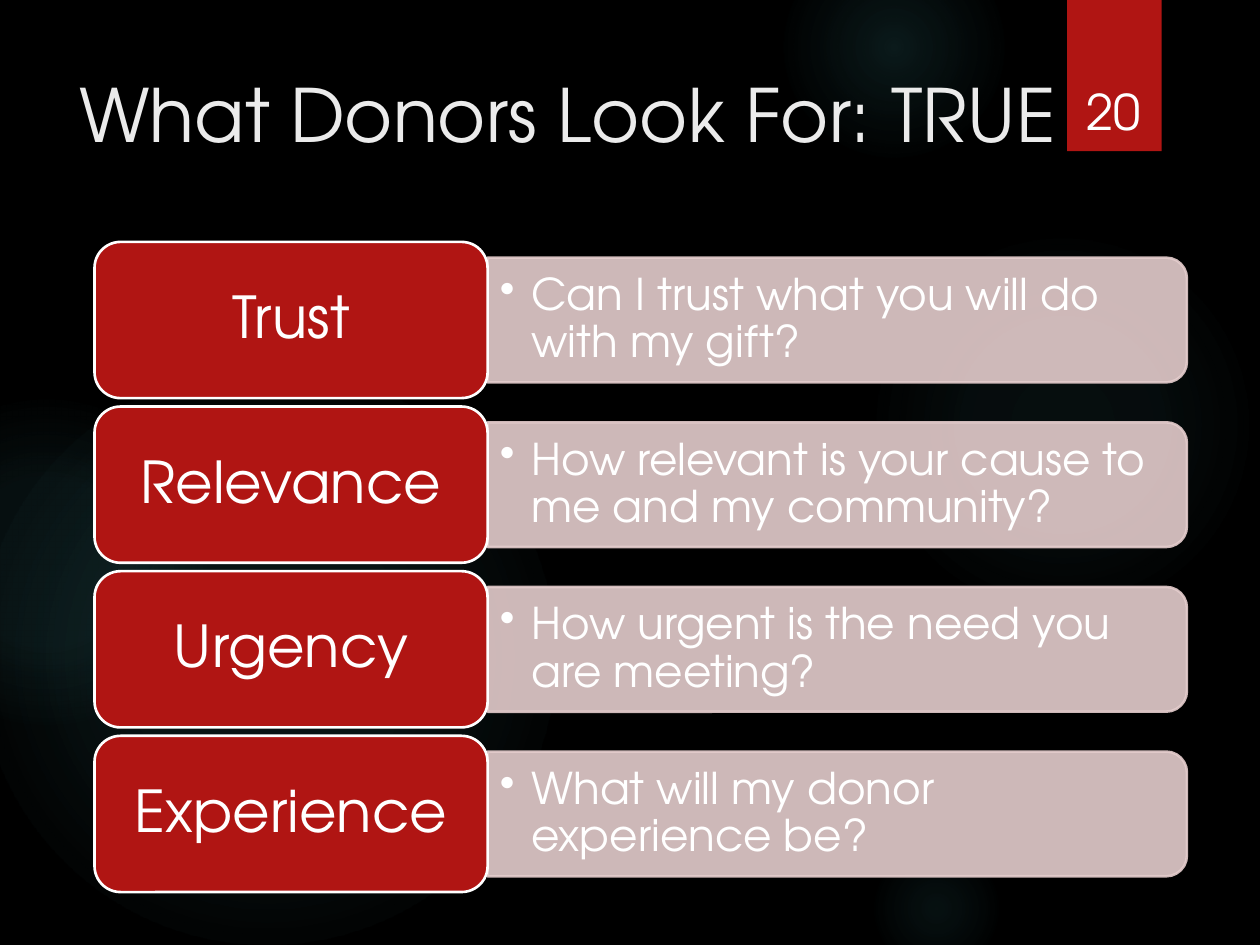
from lxml import etree
from pptx import Presentation
from pptx.dml.color import RGBColor
from pptx.enum.shapes import MSO_SHAPE
from pptx.enum.text import MSO_ANCHOR, PP_ALIGN
from pptx.oxml import parse_xml
from pptx.oxml.ns import nsdecls, qn
from pptx.util import Inches, Pt

OVAL, RECT = MSO_SHAPE.OVAL, MSO_SHAPE.RECTANGLE
ROUNDED, ROUND_SIDE = MSO_SHAPE.ROUNDED_RECTANGLE, MSO_SHAPE.ROUND_2_SAME_RECTANGLE
TOP, MIDDLE, BOTTOM = MSO_ANCHOR.TOP, MSO_ANCHOR.MIDDLE, MSO_ANCHOR.BOTTOM
LEFT, CENTER = PP_ALIGN.LEFT, PP_ALIGN.CENTER

THEME = dict(font="TeX Gyre Adventor", back="000000", glow="50B9C1", red="B01513",
             pink="E4CCCC", white="FFFFFF", title_color="EBEBEB",
             title=42, label=33, number=28, answer=25)


def rgb(name):
    return RGBColor.from_string(THEME[name])


def write(sp, text, size, color="white", align=LEFT, anchor=MIDDLE,
          inset=(0.1, 0.05), spacing=None, bullet=False):
    tf = sp.text_frame
    tf.word_wrap = True
    tf.vertical_anchor = anchor
    tf.margin_left = tf.margin_right = Inches(inset[0])
    tf.margin_top = tf.margin_bottom = Inches(inset[1])
    p = tf.paragraphs[0]
    p.alignment = align
    p.line_spacing = spacing
    if bullet:
        pPr = p._p.get_or_add_pPr()
        pPr.set("marL", str(Inches(0.25)))
        pPr.set("indent", str(-Inches(0.25)))
        etree.SubElement(pPr, qn("a:buChar")).set("char", "•")
    r = p.add_run()
    r.text = text
    r.font.name = THEME["font"]
    r.font.size = Pt(THEME[size])
    r.font.color.rgb = rgb(color)


prs = Presentation()
prs.slide_width, prs.slide_height = Inches(10), Inches(7.5)
s = prs.slides.add_slide(prs.slide_layouts[5])
s.background.fill.solid()
s.background.fill.fore_color.rgb = rgb("back")

glows = [
    (6.89, 1.83, 3.08, ((0, 7), (36, 6), (69, 0))),
    (6.22, -0.5, 1.75, ((0, 14), (36, 7), (73, 0))),
    (6.89, 6.67, 1.08, ((0, 9), (36, 5), (66, 0))),
    (-0.17, 2.92, 4.58, ((0, 11), (36, 10), (75, 0))),
    (-0.92, 3.17, 2.58, ((0, 8), (36, 8), (72, 0))),
]
for x, y, size, stops in glows:
    sp = s.shapes.add_shape(OVAL, Inches(x), Inches(y), Inches(size), Inches(size))
    sp.shadow.inherit = False
    sp.line.fill.background()
    gs = "".join(
        f'<a:gs pos="{pos * 1000}"><a:srgbClr val="{THEME["glow"]}">'
        f'<a:alpha val="{alpha * 1000}"/></a:srgbClr></a:gs>' for pos, alpha in stops)
    sp._element.spPr.find(qn("a:prstGeom")).addnext(parse_xml(
        f'<a:gradFill {nsdecls("a")}><a:gsLst>{gs}</a:gsLst><a:path path="circle">'
        '<a:fillToRect l="50000" t="50000" r="50000" b="50000"/></a:path></a:gradFill>'))

tab = s.shapes.add_shape(RECT, Inches(8.47), 0, Inches(0.75), Inches(1.2))
tab.shadow.inherit = False
tab.fill.solid()
tab.fill.fore_color.rgb = rgb("red")
tab.line.fill.background()

title = s.shapes.title
title.left, title.top, title.width, title.height = map(Inches, (0.53, 0.5, 8.05, 1.53))
write(title, "What Donors Look For: TRUE", "title", color="title_color", anchor=TOP)
s.shapes._spTree.append(title._element)

rows = [
    ("Trust", "Can I trust what you will do with my gift?"),
    ("Relevance", "How relevant is your cause to me and my community?"),
    ("Urgency", "How urgent is the need you are meeting?"),
    ("Experience", "What will my donor experience be?"),
]
LABEL_X, LABEL_W, LABEL_H = 0.75, 3.12, 1.24
BAR_X, BAR_W, BAR_H = LABEL_X + LABEL_W, 5.55, 0.99
FIRST_Y, LAST_Y = 1.92, 5.84
STEP = (LAST_Y - FIRST_Y) / (len(rows) - 1)

for i, (label, answer) in enumerate(rows):
    y = FIRST_Y + i * STEP
    mid = y + LABEL_H / 2

    bar = s.shapes.add_shape(ROUND_SIDE, Inches(BAR_X + (BAR_W - BAR_H) / 2),
                             Inches(mid - BAR_W / 2), Inches(BAR_H), Inches(BAR_W))
    bar.rotation = 90
    box = s.shapes.add_shape(ROUNDED, Inches(LABEL_X), Inches(y),
                             Inches(LABEL_W), Inches(LABEL_H))
    for sp, fill, line in ((bar, "pink", "pink"), (box, "red", "white")):
        sp.shadow.inherit = False
        sp.fill.solid()
        sp.fill.fore_color.rgb = rgb(fill)
        sp.line.color.rgb = rgb(line)
        sp.line.width = Pt(1.5)
    for clr in bar._element.spPr.iter(qn("a:srgbClr")):
        etree.SubElement(clr, qn("a:alpha")).set("val", "90000")
    write(box, label, "label", align=CENTER, inset=(0.2, 0.13), spacing=0.9)

    tb = s.shapes.add_textbox(Inches(BAR_X), Inches(mid - 0.45), Inches(5.5), Inches(0.9))
    write(tb, answer, "answer", spacing=0.9, bullet=True)

number = s.shapes.add_textbox(Inches(8.49), Inches(0.32), Inches(0.69), Inches(0.84))
write(number, "20", "number", align=CENTER, anchor=BOTTOM)

prs.save("out.pptx")
